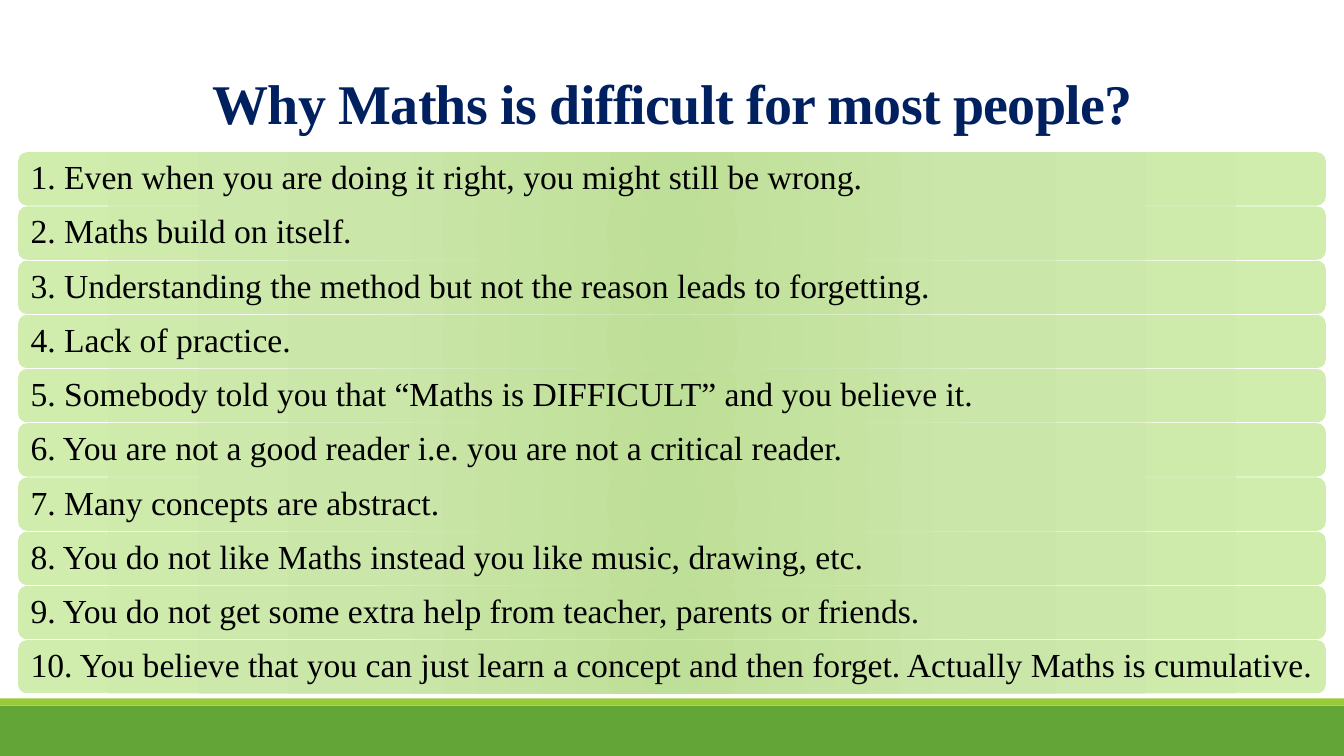
from lxml import etree
from pptx import Presentation, util as u
from pptx.dml.color import RGBColor
from pptx.enum import shapes, text
from pptx.oxml import parse_xml
from pptx.oxml.ns import nsdecls

THEME = {
    "font": "Times New Roman",
    "title_size": 40,
    "reason_size": 24,
    "title": "002060",
    "reason": "000000",
    "footer": "63A537",
    "footer_edge": "99CB38",
    "bar_stops": [(0, "BEDF97"), (45, "CAE6A9"), (100, "D0EDAE")],
}
REASONS = [
    "Even when you are doing it right, you might still be wrong.",
    "Maths build on itself.",
    "Understanding the method but not the reason leads to forgetting.",
    "Lack of practice.",
    "Somebody told you that “Maths is DIFFICULT” and you believe it.",
    "You are not a good reader i.e. you are not a critical reader.",
    "Many concepts are abstract.",
    "You do not like Maths instead you like music, drawing, etc.",
    "You do not get some extra help from teacher, parents or friends.",
    "You believe that you can just learn a concept and then forget. "
    "Actually Maths is cumulative.",
]
WIDTH, HEIGHT = 13.33, 7.5
MARGIN = 0.18
FIRST_TOP, LAST_TOP, BAR_HEIGHT = 1.51, 6.35, 0.53
ROW_PITCH = (LAST_TOP - FIRST_TOP) / (len(REASONS) - 1)


def add_block(page, kind, left, top, width, height):
    box = page.shapes.add_shape(
        kind, u.Inches(left), u.Inches(top), u.Inches(width), u.Inches(height))
    box.shadow.inherit = False
    box.line.fill.background()
    return box


def write(box, words, size, color, align, spacing):
    frame = box.text_frame
    frame.word_wrap = True
    frame.vertical_anchor = text.MSO_ANCHOR.MIDDLE
    para = frame.paragraphs[0]
    para.text = words
    para.alignment = align
    para.line_spacing = spacing
    para.font.name = THEME["font"]
    para.font.size = u.Pt(size)
    para.font.color.rgb = RGBColor.from_string(color)
    return para


deck = Presentation()
deck.slide_width, deck.slide_height = u.Inches(WIDTH), u.Inches(HEIGHT)
page = deck.slides.add_slide(deck.slide_layouts[6])

for top, height, color in [(7, 0.5, THEME["footer"]),
                           (6.93, 0.07, THEME["footer_edge"])]:
    band = add_block(page, shapes.MSO_SHAPE.RECTANGLE, 0, top, WIDTH, height)
    band.fill.solid()
    band.fill.fore_color.rgb = RGBColor.from_string(color)

title = page.shapes.add_textbox(
    u.Inches(1.17), u.Inches(0.63), u.Inches(11), u.Inches(0.88))
para = write(title, "Why Maths is difficult for most people?",
             THEME["title_size"], THEME["title"], text.PP_ALIGN.CENTER, 0.85)
para.font.bold = True
para.runs[0].font._element.set("spc", "-50")

stops = "".join(
    f'<a:gs pos="{share * 1000}"><a:srgbClr val="{color}"/></a:gs>'
    for share, color in THEME["bar_stops"])
gradient = (
    f'<a:gradFill {nsdecls("a")} rotWithShape="1"><a:gsLst>{stops}</a:gsLst>'
    '<a:path path="circle"><a:fillToRect l="100000" t="100000" '
    'r="100000" b="100000"/></a:path></a:gradFill>')

for row, reason in enumerate(REASONS):
    bar = add_block(page, shapes.MSO_SHAPE.ROUNDED_RECTANGLE, MARGIN,
                    FIRST_TOP + row * ROW_PITCH, WIDTH - 2 * MARGIN, BAR_HEIGHT)
    bar._element.spPr.find(
        "a:prstGeom", {"a": "http://schemas.openxmlformats.org/drawingml/2006/main"}
    ).addnext(parse_xml(gradient))
    frame = bar.text_frame
    frame.margin_left = u.Inches(0.1)
    frame.margin_right = u.Inches(0.05)
    frame.margin_top = frame.margin_bottom = u.Inches(0.1)
    write(bar, f"{row + 1}. {reason}", THEME["reason_size"], THEME["reason"],
          text.PP_ALIGN.LEFT, 0.9)

deck.save("out.pptx")
